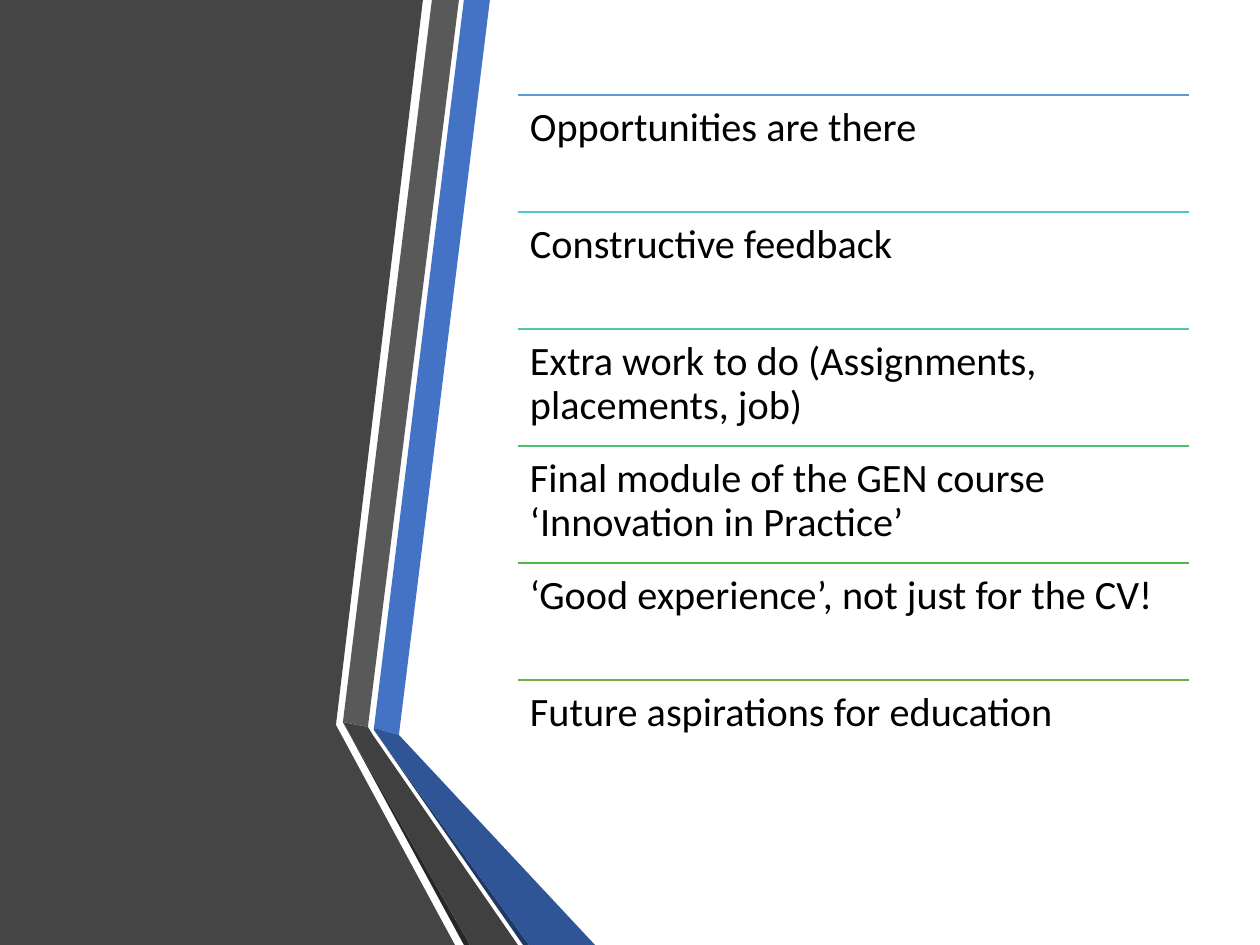
from lxml import etree
from pptx import Presentation
from pptx import util as u
from pptx.dml.color import RGBColor
from pptx.enum import shapes, text
from pptx.oxml.ns import qn

PX = 914400 / 126  # EMU in one px
WIDTH, HEIGHT = 1260, 945
ROW_LEFT, ROW_TOP, ROW_WIDTH, ROW_HEIGHT = 518, 95, 671, 117
INSET = 12

DARK_PANEL = [(333, 0), (423, 0), (336, 725), (455, HEIGHT), (0, HEIGHT), (0, 0)]

# Bent ribbons beside the panel: colour, corner points
RIBBONS = [
    ("4472C4", [(374, 728), (399, 735), (490, 0), (464, 0)]),
    ("595959", [(459, 0), (432, 0), (343, 722), (368, 727)]),
    ("262626", [(343, 722), (464, HEIGHT), (470, HEIGHT)]),
    ("203864", [(374, 730), (523, HEIGHT), (529, HEIGHT)]),
    ("2F5597", [(374, 730), (529, HEIGHT), (595, HEIGHT), (399, 735), (374, 728)]),
    ("404040", [(518, HEIGHT), (373, 735), (368, 727), (343, 722), (470, HEIGHT)]),
]

# Rows of the list: rule colour, wording
ROWS = [
    ("5B9BD5", "Opportunities are there"),
    ("55C3CF", "Constructive feedback"),
    ("50C8A7", "Extra work to do (Assignments, placements, job)"),
    ("4BC174", "Final module of the GEN course ‘Innovation in Practice’"),
    ("4ABA46", "‘Good experience’, not just for the CV!"),
    ("70AD47", "Future aspirations for education"),
]


def px(length):
    return u.Emu(round(length * PX))


def color(hex_value):
    return RGBColor.from_string(hex_value)


def add_polygon(parent, points, fill):
    builder = parent.shapes.build_freeform(*points[0], scale=PX)
    builder.add_line_segments(points[1:], close=True)
    polygon = builder.convert_to_shape()
    polygon.shadow.inherit = False
    polygon.fill.solid()
    polygon.fill.fore_color.rgb = color(fill)
    polygon.line.fill.background()


def add_rule(parent, top, stroke):
    rule = parent.shapes.add_connector(
        shapes.MSO_CONNECTOR.STRAIGHT,
        px(ROW_LEFT), px(top), px(ROW_LEFT + ROW_WIDTH), px(top))
    rule.line.color.rgb = color(stroke)
    rule.line.width = u.Pt(1)
    etree.SubElement(rule._element.spPr, qn("a:effectLst"))


def add_row_text(parent, top, wording):
    box = parent.shapes.add_textbox(px(ROW_LEFT), px(top), px(ROW_WIDTH), px(ROW_HEIGHT))
    frame = box.text_frame
    frame.word_wrap = True
    frame.vertical_anchor = text.MSO_ANCHOR.TOP
    frame.margin_left = frame.margin_right = px(INSET)
    frame.margin_top = frame.margin_bottom = px(INSET)
    para = frame.paragraphs[0]
    para.text = wording
    para.line_spacing = 0.9
    para.font.name = "Calibri"
    para.font.size = u.Pt(23)
    para.font.color.rgb = color("000000")


def main():
    deck = Presentation()
    deck.slide_width, deck.slide_height = px(WIDTH), px(HEIGHT)
    page = deck.slides.add_slide(deck.slide_layouts[6])

    # Dark panel and ribbons
    add_polygon(page, DARK_PANEL, "454545")
    ribbons = page.shapes.add_group_shape()
    for fill, points in RIBBONS:
        add_polygon(ribbons, points, fill)

    # Ruled list
    ruled_list = page.shapes.add_group_shape()
    for index, (stroke, wording) in enumerate(ROWS):
        top = ROW_TOP + index * ROW_HEIGHT
        add_rule(ruled_list, top, stroke)
        add_row_text(ruled_list, top, wording)

    deck.save("out.pptx")


if __name__ == "__main__":
    main()
